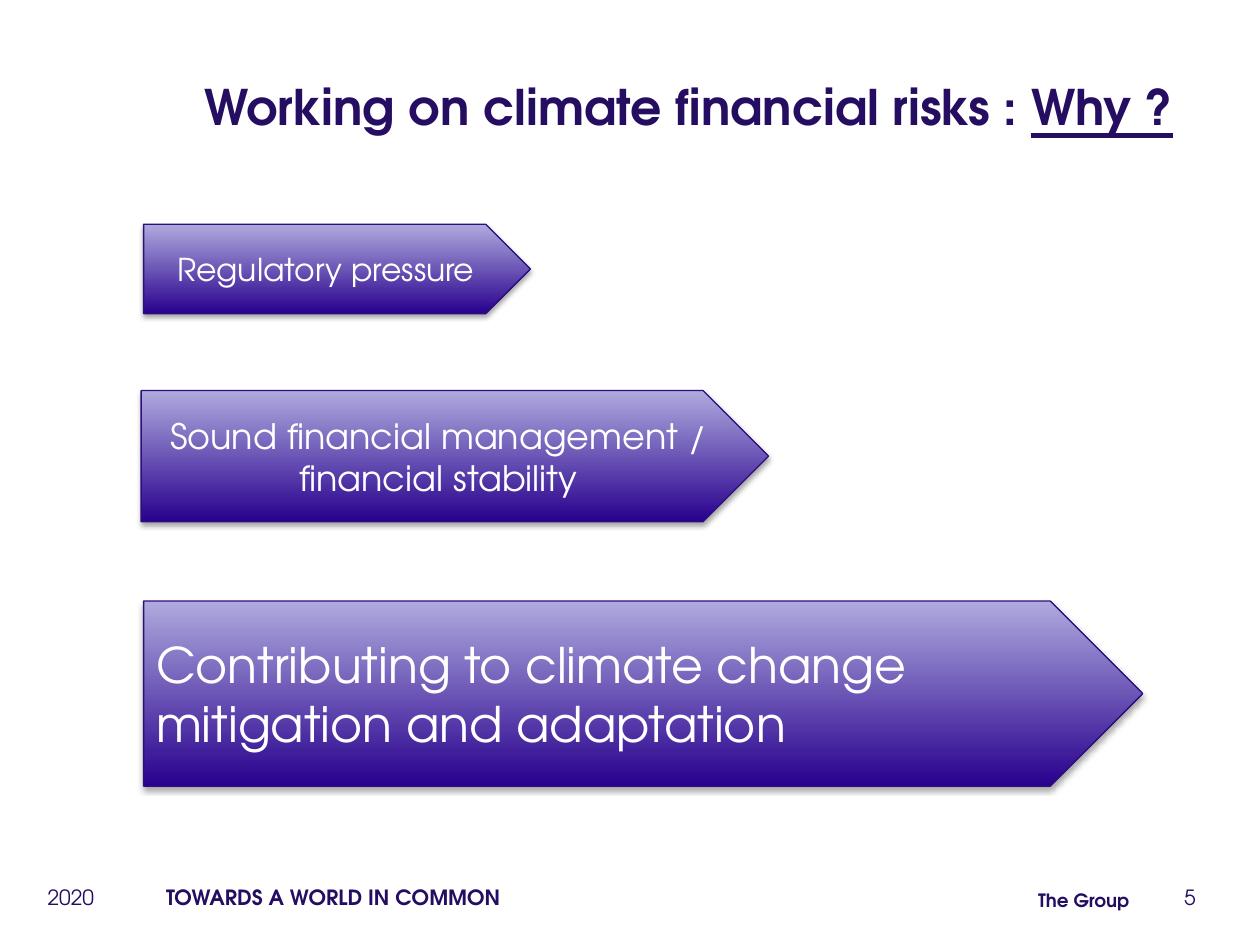
from lxml.etree import SubElement
from pptx import Presentation
from pptx.dml.color import RGBColor
from pptx.enum.shapes import MSO_SHAPE
from pptx.enum.text import MSO_ANCHOR, PP_ALIGN
from pptx.oxml.ns import qn
from pptx.util import Inches, Pt

FONT = "TeX Gyre Adventor"
COLORS = {"navy": "250E62", "line": "2D0E7D", "dark": "28018D",
          "light": "AFAADE", "white": "FFFFFF", "shadow": "000000"}
TITLE = [("Working on climate financial risks : ", False), ("Why ?", True)]
ARROWS = [
    ("Regulatory pressure", (1.14, 1.78, 3.07, 0.71), 18, PP_ALIGN.CENTER),
    ("Sound financial management / financial stability",
     (1.12, 3.1, 4.98, 1.04), 20, PP_ALIGN.CENTER),
    ("Contributing to climate change mitigation and adaptation",
     (1.14, 4.77, 7.93, 1.47), 28, PP_ALIGN.LEFT),
]
FOOTER = [
    ("2020", (0.28, 6.97, 2.33, 0.4), 12, False, PP_ALIGN.LEFT),
    ("TOWARDS A WORLD IN COMMON", (1.22, 6.97, 3.17, 0.4), 12, True, PP_ALIGN.LEFT),
    ("The Group", (7.83, 7.01, 1.23, 0.28), 10.5, True, PP_ALIGN.RIGHT),
    ("5", (9.3, 6.97, 0.41, 0.3), 12, False, PP_ALIGN.LEFT),
]


def rgb(name):
    return RGBColor.from_string(COLORS[name])


def style(p, size, color, bold=False, align=PP_ALIGN.LEFT):
    p.alignment = align
    p.font.name, p.font.size, p.font.bold = FONT, Pt(size), bold
    p.font.color.rgb = rgb(color)


def add_shadow(sp):
    sp.shadow.inherit = False
    effects = sp._element.spPr.find(qn("a:effectLst"))
    outer = SubElement(effects, qn("a:outerShdw"), blurRad=str(Pt(3.1)),
                       dist=str(Pt(1.8)), dir="5400000", rotWithShape="0")
    color = SubElement(outer, qn("a:srgbClr"), val=COLORS["shadow"])
    SubElement(color, qn("a:alpha"), val="35000")


def add_title(s):
    sp = s.shapes.title
    sp.left, sp.top, sp.width, sp.height = map(Inches, (1.52, 0.56, 7.96, 0.39))
    tf = sp.text_frame
    tf.vertical_anchor = MSO_ANCHOR.TOP
    p = tf.paragraphs[0]
    for text, underlined in TITLE:
        r = p.add_run()
        r.text = text
        if underlined:
            r.font.underline = True
    style(p, 28, "navy", True)


def add_arrow(s, text, box, size, align):
    sp = s.shapes.add_shape(MSO_SHAPE.PENTAGON, *map(Inches, box))
    sp.fill.gradient()
    sp.fill.gradient_angle = 90
    for stop, name, position in zip(sp.fill.gradient_stops, ("dark", "light"), (0, 1)):
        stop.color.rgb = rgb(name)
        stop.position = position
    sp.line.color.rgb = rgb("line")
    sp.line.width = Pt(0.75)
    add_shadow(sp)
    tf = sp.text_frame
    tf.word_wrap = True
    tf.vertical_anchor = MSO_ANCHOR.MIDDLE
    tf.text = text
    style(tf.paragraphs[0], size, "white", align=align)


def add_footer(s, text, box, size, bold, align):
    tf = s.shapes.add_textbox(*map(Inches, box)).text_frame
    tf.word_wrap = True
    tf.text = text
    style(tf.paragraphs[0], size, "navy", bold, align)


def main():
    """Build the slide on the reasons for working on climate financial risks."""
    prs = Presentation()
    prs.slide_width, prs.slide_height = Inches(10), Inches(7.5)
    s = prs.slides.add_slide(prs.slide_layouts[5])
    add_title(s)
    for arrow in ARROWS:
        add_arrow(s, *arrow)
    for item in FOOTER:
        add_footer(s, *item)
    prs.save("out.pptx")


if __name__ == "__main__":
    main()
